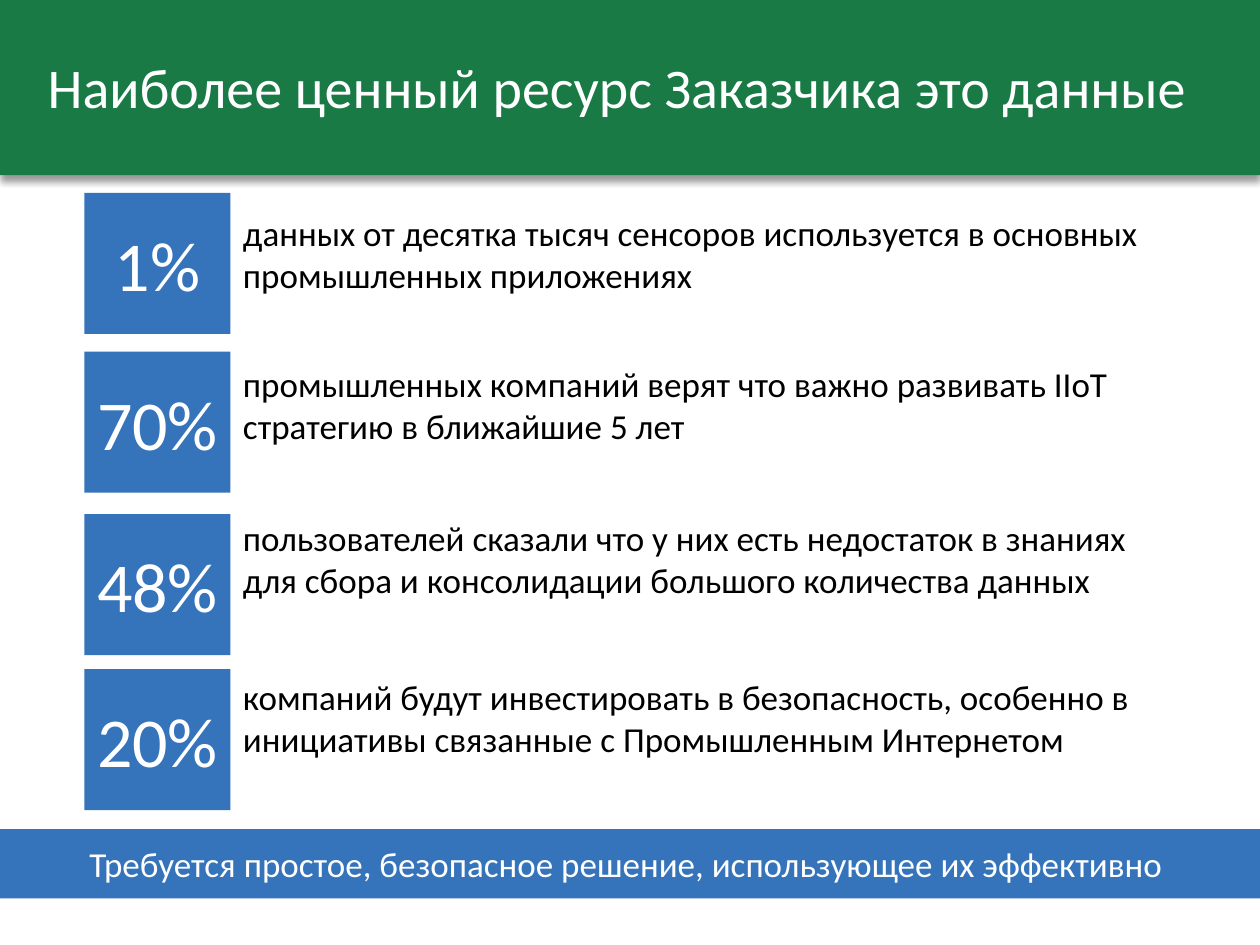
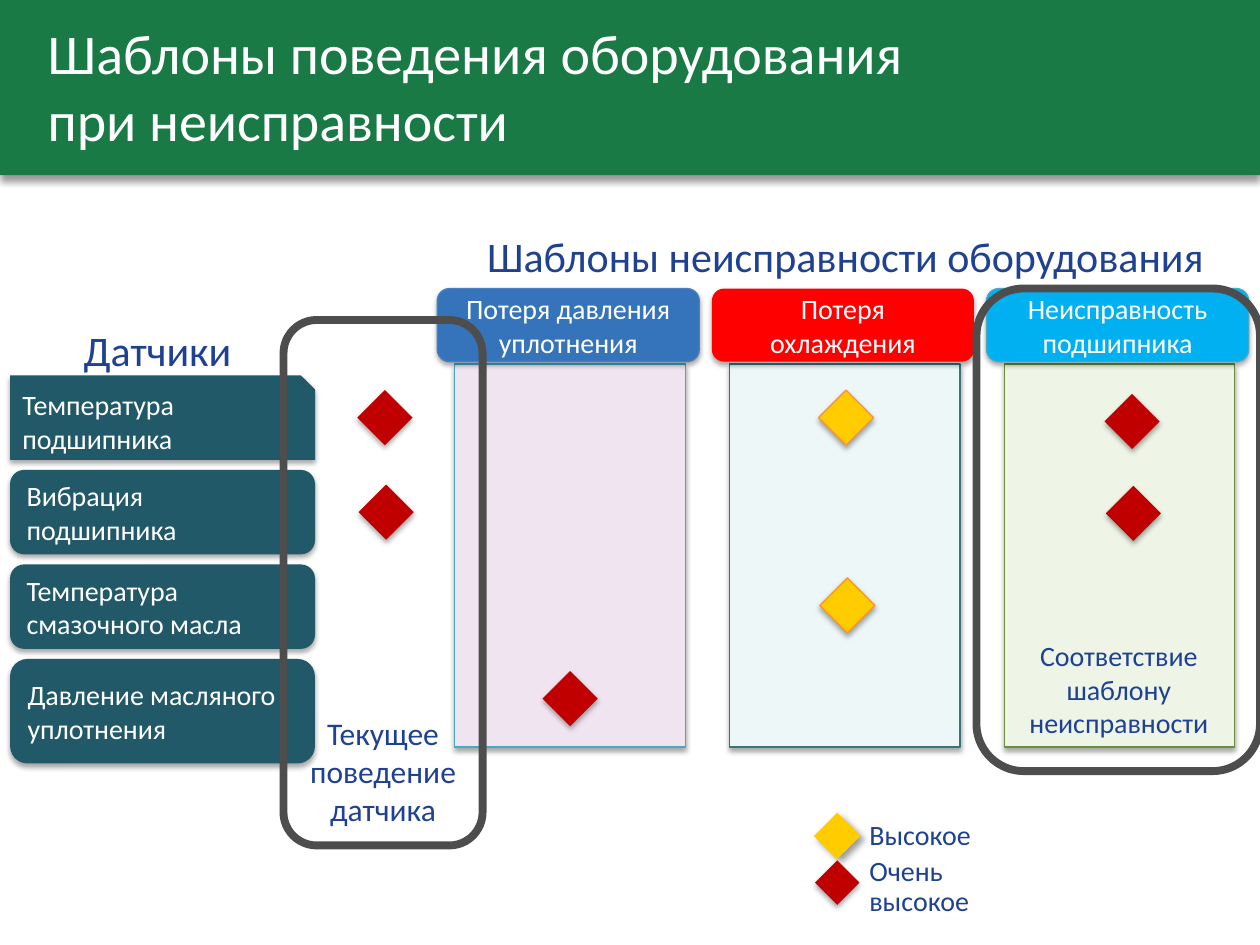
from lxml import etree
from pptx import Presentation
from pptx.dml.color import RGBColor
from pptx.enum.shapes import MSO_SHAPE as Preset
from pptx.enum.text import MSO_ANCHOR as Anchor, PP_ALIGN as Align
from pptx.oxml.ns import qn
from pptx.util import Inches, Pt

WHITE = RGBColor(0xFF, 0xFF, 0xFF)
BLACK = RGBColor(0x00, 0x00, 0x00)
GREEN = RGBColor(0x19, 0x7A, 0x45)
BLUE = RGBColor(0x35, 0x74, 0xBB)
BLUE_EDGE = RGBColor(0x4B, 0x7E, 0xBC)
NAVY = RGBColor(0x1E, 0x41, 0x91)
TEAL = RGBColor(0x21, 0x59, 0x68)
SKY = RGBColor(0x00, 0xB0, 0xF0)
SKY_EDGE = RGBColor(0x46, 0xAA, 0xC5)
RED = RGBColor(0xFF, 0x00, 0x00)
DARK_RED = RGBColor(0xC0, 0x00, 0x00)
YELLOW = RGBColor(0xFF, 0xCC, 0x00)
ORANGE = RGBColor(0xF6, 0x92, 0x40)
LILAC = RGBColor(0xEF, 0xE4, 0xF0)
MIST = RGBColor(0xED, 0xF7, 0xF7)
MIST_EDGE = RGBColor(0x37, 0x75, 0x78)
LIME = RGBColor(0xEE, 0xF5, 0xE7)
LIME_EDGE = RGBColor(0x69, 0x91, 0x3B)
GREY = RGBColor(0x4D, 0x4D, 0x4D)

FONT = "Calibri"
SOFT = (35, 3.1, 1.8, 90)
BAND_SHADOW = (40, 4, 3, 90)
SLANTED = (40, 4, 3, 45)
MARK = 0.31

FACTS = [
    ("1%", "данных от десятка тысяч сенсоров используется в основных промышленных приложениях", 1.53, 0.1),
    ("70%", "промышленных компаний верят что важно развивать IIoT стратегию в ближайшие 5 лет", 2.79, 0.04),
    ("48%", "пользователей сказали что у них есть недостаток в знаниях для сбора и консолидации "
            "большого количества данных", 4.08, -0.03),
    ("20%", "компаний будут инвестировать в безопасность, особенно в инициативы связанные с "
            "Промышленным Интернетом", 5.31, 0),
]
SENSORS = [
    ("Температура подшипника", Preset.SNIP_1_RECTANGLE, 0.67),
    ("Вибрация подшипника", Preset.FLOWCHART_ALTERNATE_PROCESS, 0.67),
    ("Температура смазочного масла", Preset.FLOWCHART_ALTERNATE_PROCESS, 0.67),
    ("Давление масляного уплотнения", Preset.FLOWCHART_ALTERNATE_PROCESS, 0.83),
]
FAULTS = [
    ("Потеря давления уплотнения", BLUE, BLUE_EDGE, LILAC, SKY_EDGE),
    ("Потеря охлаждения", RED, None, MIST, MIST_EDGE),
    ("Неисправность подшипника", SKY, SKY_EDGE, LIME, LIME_EDGE),
]
VERY_HIGH_MARKS = [(2.9, 3.16), (2.91, 3.91), (4.37, 5.39), (8.83, 3.19), (8.84, 3.92)]
HIGH_MARKS = [(6.56, 3.16), (6.57, 4.65)]


def set_all(target, values):
    """Set every attribute named in a dict."""
    for name, value in values.items():
        setattr(target, name, value)


def write(shape, text, size, colour, align=Align.LEFT, anchor=Anchor.TOP, spacing=None, inset=None):
    """Fill a shape with formatted paragraphs, one for each item of text."""
    frame = shape.text_frame
    set_all(frame, {"word_wrap": True, "vertical_anchor": anchor})
    if inset is not None:
        sides = ("margin_left", "margin_right", "margin_top", "margin_bottom")
        set_all(frame, dict.fromkeys(sides, Inches(inset)))
    for index, line in enumerate([text] if isinstance(text, str) else text):
        para = frame.add_paragraph() if index else frame.paragraphs[0]
        para.text = line
        set_all(para, {"alignment": align, "line_spacing": spacing})
        for span in para.runs:
            set_all(span.font, {"name": FONT, "size": Pt(size)})
            span.font.color.rgb = colour


def add_label(page, box, text, size, colour, **layout):
    """Add a wrapping text box."""
    label = page.shapes.add_textbox(*map(Inches, box))
    write(label, text, size, colour, **layout)


def cast_shadow(shape, opacity, blur, distance, angle):
    """Give a shape an outer black shadow."""
    effects = shape.element.spPr.find(qn("a:effectLst"))
    shadow = etree.SubElement(effects, qn("a:outerShdw"), {
        "blurRad": str(Pt(blur)), "dist": str(Pt(distance)),
        "dir": str(angle * 60000), "rotWithShape": "0"})
    tone = etree.SubElement(shadow, qn("a:srgbClr"), val="000000")
    etree.SubElement(tone, qn("a:alpha"), val=str(opacity * 1000))


def add_block(page, box, fill=None, edge=None, preset=Preset.RECTANGLE, width=0.75, shadow=None, turn=0):
    """Add a preset shape with optional fill, outline and shadow."""
    shape = page.shapes.add_shape(preset, *map(Inches, box))
    shape.rotation = turn
    if fill is None:
        shape.fill.background()
    else:
        shape.fill.solid()
        shape.fill.fore_color.rgb = fill
    if edge is None:
        shape.line.fill.background()
    else:
        shape.line.color.rgb = edge
        shape.line.width = Pt(width)
    shape.shadow.inherit = False
    if shadow:
        cast_shadow(shape, *shadow)
    return shape


def add_page(deck, title):
    """Add a blank page with the green title band."""
    page = deck.slides.add_slide(deck.slide_layouts[6])
    add_block(page, (0, 0, 10, 1.39), GREEN, shadow=BAND_SHADOW)
    add_label(page, (0.28, 0.21, 9.45, 0.94), title, 32, WHITE, anchor=Anchor.MIDDLE)
    return page


def add_fact(page, box, share, text, text_shift):
    """Place a percentage tile with its statement to the right."""
    left, top, width, height = box
    tile = 1.16
    add_label(page, (left + tile, top + text_shift, width - tile, height), text, 20, BLACK)
    square = add_block(page, (left, top, tile, height), BLUE)
    write(square, share, 40, WHITE, Align.CENTER, Anchor.MIDDLE)


def add_sensors(page, box):
    """Stack the sensor names under their heading."""
    left, top, width, pitch = box
    add_label(page, (0, top - 0.45, 2.5, 0.5), "Датчики", 24, NAVY, align=Align.CENTER)
    for row, (name, preset, height) in enumerate(SENSORS):
        plate = add_block(page, (left, top + row * pitch, width, height), TEAL, preset=preset, shadow=SOFT)
        write(plate, name, 16, WHITE, anchor=Anchor.MIDDLE)


def add_faults(page, box):
    """Place the fault columns, each a header above a tinted panel."""
    left, top, width, height = box
    add_label(page, (left - 0.05, top - 0.51, 6.58, 0.5), "Шаблоны неисправности оборудования",
              24, NAVY, align=Align.CENTER)
    for column, (name, fill, edge, tint, tint_edge) in enumerate(FAULTS):
        x = left + column * 2.18
        add_block(page, (x + 0.14, top + 0.6, 1.83, height - 0.6), tint, tint_edge, shadow=SOFT)
        header = add_block(page, (x, top, width, 0.58), fill, edge,
                           Preset.FLOWCHART_ALTERNATE_PROCESS, shadow=SOFT)
        write(header, name, 16, WHITE, Align.CENTER, Anchor.MIDDLE)


def add_marks(page, places, fill, edge=None):
    """Place turned squares of one level."""
    for x, y in places:
        add_block(page, (x, y, MARK, MARK), fill, edge, shadow=SOFT, turn=45)


def add_legend(page, box):
    """Explain the two mark colours."""
    left, top, width, height = box
    add_block(page, (left, top + 0.03, 0.37, 0.37), YELLOW, preset=Preset.DIAMOND, shadow=SLANTED)
    add_block(page, (left + 0.06, top + 0.46, 0.25, 0.25), DARK_RED, shadow=SOFT, turn=45)
    for row, name in enumerate(("Высокое", "Очень высокое")):
        add_label(page, (left + 0.37, top + row * 0.41, width - 0.37, height), name, 16, NAVY,
                  anchor=Anchor.MIDDLE, spacing=0.9, inset=0.07)


def add_focus(page, box, text, size, text_box):
    """Frame a column and caption it inside the frame."""
    left, top = box[:2]
    x, y, width, height = text_box
    add_label(page, (left + x, top + y, width, height), text, size, NAVY, align=Align.CENTER)
    add_block(page, box, edge=GREY, preset=Preset.ROUNDED_RECTANGLE, width=4.5)


def build_data_page(deck):
    """Build the page on the value of data."""
    page = add_page(deck, "Наиболее ценный ресурс Заказчика это данные")
    for share, text, top, shift in FACTS:
        add_fact(page, (0.67, top, 8.74, 1.12), share, text, shift)
    band = add_block(page, (-0.06, 6.58, 10.06, 0.55), BLUE)
    write(band, "Требуется простое, безопасное решение, использующее их эффективно",
          20, WHITE, Align.CENTER, Anchor.MIDDLE)


def build_patterns_page(deck):
    """Build the page on equipment fault patterns."""
    page = add_page(deck, "Шаблоны поведения оборудования\vпри неисправности")
    add_sensors(page, (0.08, 2.98, 2.42, 0.75))
    add_faults(page, (3.47, 2.29, 2.08, 3.64))
    add_marks(page, VERY_HIGH_MARKS, DARK_RED)
    add_marks(page, HIGH_MARKS, YELLOW, ORANGE)
    add_legend(page, (6.46, 6.42, 1.54, 0.43))
    add_focus(page, (2.25, 2.54, 1.58, 4.17), ["Текущее поведение", "датчика"], 18, (0, 3.08, 1.58, 1.01))
    add_focus(page, (7.75, 2.29, 2.25, 3.83), "Соответствие шаблону неисправности", 16,
              (0.17, 2.73, 1.92, 0.91))


def main():
    """Build and save the deck."""
    deck = Presentation()
    set_all(deck, {"slide_width": Inches(10), "slide_height": Inches(7.5)})
    build_data_page(deck)
    build_patterns_page(deck)
    deck.save("out.pptx")


if __name__ == "__main__":
    main()
